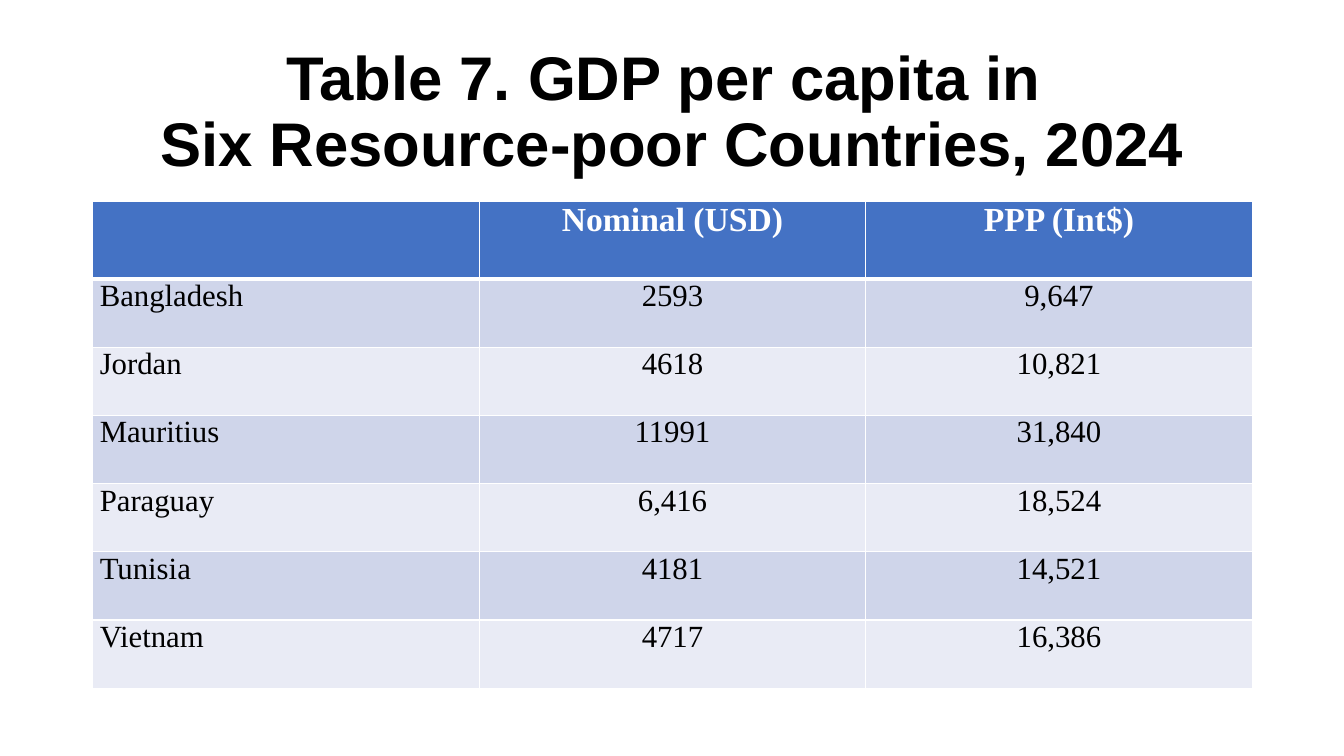
from typing import NamedTuple

from lxml import etree
from pptx import Presentation
from pptx.dml.color import RGBColor
from pptx.enum.text import MSO_ANCHOR, MSO_AUTO_SIZE, PP_ALIGN
from pptx.oxml.ns import qn
from pptx.slide import Slide
from pptx.table import _Cell
from pptx.text.text import Font, _Paragraph
from pptx.util import Inches, Pt

LEFT, MID = PP_ALIGN.LEFT, PP_ALIGN.CENTER
TOP, CENTER = MSO_ANCHOR.TOP, MSO_ANCHOR.MIDDLE
NO_FIT = MSO_AUTO_SIZE.NONE
WHITE, BLACK, BLUE = "FFFFFF", "000000", "4472C4"
BANDS = ("CFD5EA", "E9EBF5")
X, WIDTH = 0.92, 11.5
TABLE_Y, TABLE_H, HEAD_H = 2, 4.83, 0.77


class Look(NamedTuple):
    face: str
    size: float
    color: str
    bold: bool


class Nation(NamedTuple):
    name: str
    nominal: str
    ppp: str


TITLE = Look("Arial", 44, BLACK, True)
HEAD = Look("Times New Roman", 24, WHITE, True)
BODY = Look("Times New Roman", 22, BLACK, False)
ROWS = [
    Nation("", "Nominal (USD)", "PPP (Int$)"),
    Nation("Bangladesh", "2593", "9,647"),
    Nation("Jordan", "4618", "10,821"),
    Nation("Mauritius", "11991", "31,840"),
    Nation("Paraguay", "6,416", "18,524"),
    Nation("Tunisia", "4181", "14,521"),
    Nation("Vietnam", "4717", "16,386"),
]


def paint(code: str) -> RGBColor:
    return RGBColor.from_string(code)


def style(font: Font, look: Look) -> None:
    font.name = look.face
    font.size = Pt(look.size)
    font.bold = look.bold
    font.color.rgb = paint(look.color)


def add_run(para: _Paragraph, text: str, look: Look) -> None:
    run = para.add_run()
    run.text = text
    style(run.font, look)


def add_edge(cell: _Cell, side: str, width: float) -> None:
    props = cell._tc.get_or_add_tcPr()
    line = etree.SubElement(props, qn(f"a:ln{side}"), w=str(Pt(width)))
    fill = etree.SubElement(line, qn("a:solidFill"))
    etree.SubElement(fill, qn("a:srgbClr"), val=WHITE)


def fill_cell(cell: _Cell, text: str, row: int, col: int) -> None:
    widths = {"L": 1, "R": 1, "T": 3 if row == 1 else 1, "B": 3 if row == 0 else 1}
    for side, width in widths.items():
        add_edge(cell, side, width)
    cell.fill.solid()
    cell.fill.fore_color.rgb = paint(BANDS[(row - 1) % 2] if row else BLUE)
    cell.margin_left = cell.margin_right = Inches(0.07)
    cell.margin_top = cell.margin_bottom = 0
    cell.vertical_anchor = TOP
    para = cell.text_frame.paragraphs[0]
    para.alignment = MID if col else LEFT
    if text:
        add_run(para, text, BODY if row else HEAD)


def add_title(slide: Slide) -> None:
    title = slide.shapes.title
    title.left, title.top = Inches(X), Inches(0.4)
    title.width, title.height = Inches(WIDTH), Inches(1.45)
    frame = title.text_frame
    frame.word_wrap = True
    frame.auto_size = NO_FIT
    frame.vertical_anchor = CENTER
    para = frame.paragraphs[0]
    para.alignment = MID
    para.line_spacing = 0.9
    add_run(para, "Table 7. GDP per capita in ", TITLE)
    para.add_line_break()
    add_run(para, "Six Resource-poor Countries, 2024", TITLE)


def add_grid(slide: Slide) -> None:
    count = len(ROWS)
    frame = slide.shapes.add_table(
        count, len(Nation._fields),
        Inches(X), Inches(TABLE_Y), Inches(WIDTH), Inches(TABLE_H),
    )
    table = frame.table
    body_h = (TABLE_H - HEAD_H) / (count - 1)
    for row, nation in enumerate(ROWS):
        table.rows[row].height = Inches(body_h if row else HEAD_H)
        for col, text in enumerate(nation):
            fill_cell(table.cell(row, col), text, row, col)


def main() -> None:
    deck = Presentation()
    deck.slide_width, deck.slide_height = Inches(13.33), Inches(7.5)
    slide = deck.slides.add_slide(deck.slide_layouts[5])
    add_title(slide)
    add_grid(slide)
    deck.save("out.pptx")


if __name__ == "__main__":
    main()
